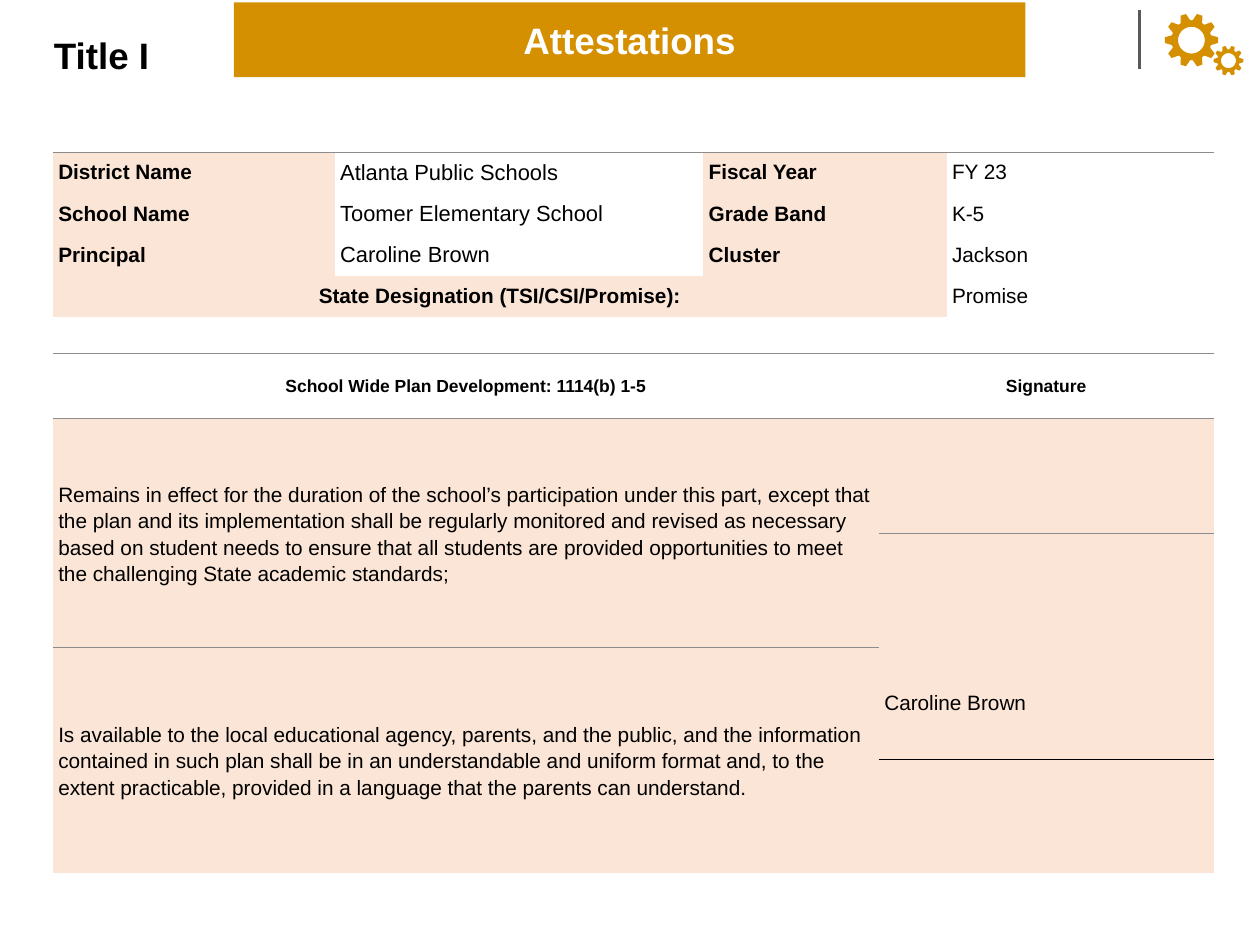
from math import cos, radians, sin

from lxml import etree
from pptx import Presentation
from pptx.dml.color import RGBColor
from pptx.enum.shapes import MSO_CONNECTOR
from pptx.enum.text import MSO_ANCHOR, MSO_AUTO_SIZE, PP_ALIGN
from pptx.oxml.ns import qn
from pptx.util import Inches, Pt

LEFT, CENTER = PP_ALIGN.LEFT, PP_ALIGN.CENTER
MIDDLE = MSO_ANCHOR.MIDDLE
NO_AUTOFIT = MSO_AUTO_SIZE.NONE
STRAIGHT = MSO_CONNECTOR.STRAIGHT

GOLD = RGBColor(0xD5, 0x90, 0x02)
PEACH = RGBColor(0xFB, 0xE5, 0xD6)
GRAY = RGBColor(0x8C, 0x8C, 0x8C)
DARK_GRAY = RGBColor(0x59, 0x59, 0x59)
BLACK = RGBColor(0, 0, 0)
WHITE = RGBColor(0xFF, 0xFF, 0xFF)

PLAIN_TABLE_STYLE = "{2D5ABB26-0587-4C30-8999-92F81FD0307C}"
MARGIN = Inches(0.67)
PADDING = Inches(0.07)


def write(frame, text, size, bold, color=BLACK, align=LEFT, spacing=1.0):
    frame.text = text
    paragraph = frame.paragraphs[0]
    paragraph.alignment = align
    paragraph.line_spacing = spacing
    for run in paragraph.runs:
        run.font.name = "Arial"
        run.font.size = Pt(size)
        run.font.bold = bold
        run.font.color.rgb = color


def rule(cell, side, color):
    properties = cell._tc.get_or_add_tcPr()
    line = etree.Element(qn(f"a:{side}"), w=str(Pt(1)))
    fill = etree.SubElement(line, qn("a:solidFill"))
    etree.SubElement(fill, qn("a:srgbClr"), val=str(color))
    borders = [child for child in properties if child.tag in (qn("a:lnT"), qn("a:lnB"))]
    properties.insert(len(borders), line)


prs = Presentation()
prs.slide_width, prs.slide_height = Inches(16), Inches(12)
slide = prs.slides.add_slide(prs.slide_layouts[5])

banner = slide.shapes.title
banner.left, banner.top = Inches(2.97), Inches(0.03)
banner.width, banner.height = Inches(10.05), Inches(0.95)
banner.fill.solid()
banner.fill.fore_color.rgb = GOLD
write(banner.text_frame, "Attestations", 33.6, True, WHITE, CENTER)

program = slide.shapes.add_textbox(0, Inches(0.14), Inches(2.58), Inches(1.12))
write(program.text_frame, "Title I", 33.6, True, align=CENTER)

for heading in (banner, program):
    heading.text_frame.word_wrap = True
    heading.text_frame.auto_size = NO_AUTOFIT
    heading.text_frame.vertical_anchor = MIDDLE

divider = slide.shapes.add_connector(
    STRAIGHT, Inches(14.47), Inches(0.13), Inches(14.47), Inches(0.88))
divider.line.color.rgb = DARK_GRAY
divider.line.width = Pt(2)
etree.SubElement(divider._element.spPr, qn("a:effectLst"))

TEETH = 10
TOOTH_PROFILE = [(-18, 0.74), (-13.5, 0.76), (-10, 0.86), (-6, 1),
                 (6, 1), (10, 0.86), (13.5, 0.76)]
gears = slide.shapes.add_group_shape()
for center_x, center_y, radius in ((15.13, 0.51, 0.34), (15.6, 0.77, 0.19)):
    rim = [(360 / TEETH * (tooth + 0.5) + turn, reach)
           for tooth in range(TEETH) for turn, reach in TOOTH_PROFILE]
    hole = [(turn, 0.5) for turn in range(0, 360, 10)]
    rim_points, hole_points = [
        [(Inches(center_x + radius * reach * sin(radians(turn))),
          Inches(center_y - radius * reach * cos(radians(turn))))
         for turn, reach in contour]
        for contour in (rim, hole)]
    outline = gears.shapes.build_freeform(*rim_points[0])
    outline.add_line_segments(rim_points[1:], close=True)
    outline.move_to(*hole_points[0])
    outline.add_line_segments(hole_points[1:], close=True)
    gear = outline.convert_to_shape()
    gear.fill.solid()
    gear.fill.fore_color.rgb = GOLD
    gear.line.fill.background()
    gear.shadow.inherit = False

plan_columns, plan_rows = [10.49, 4.25], [0.83, 1.45, 1.45, 1.43, 1.43]
school_columns, school_rows = [3.58, 4.68, 3.09, 3.4], [0.525] * 4
tables = []
for top, columns, rows in ((4.49, plan_columns, plan_rows),
                           (1.93, school_columns, school_rows)):
    table = slide.shapes.add_table(
        len(rows), len(columns), MARGIN, Inches(top),
        Inches(sum(columns)), Inches(sum(rows))).table
    table._tbl.tblPr.find(qn("a:tableStyleId")).text = PLAIN_TABLE_STYLE
    table.horz_banding = False
    for column, width in zip(table.columns, columns):
        column.width = Inches(width)
    for row, height in zip(table.rows, rows):
        row.height = Inches(height)
    for cell in table.iter_cells():
        cell.vertical_anchor = MIDDLE
        cell.margin_left = cell.margin_right = PADDING
        cell.margin_top = cell.margin_bottom = PADDING
    tables.append(table)
plan, school = tables

plan_headers = ["School Wide Plan Development: 1114(b) 1-5", "Signature"]
requirements = [
    "Remains in effect for the duration of the school’s participation under this part, "
    "except that the plan and its implementation shall be regularly monitored and revised "
    "as necessary based on student needs to ensure that all students are provided "
    "opportunities to meet the challenging State academic standards;",
    "Is available to the local educational agency, parents, and the public, and the "
    "information contained in such plan shall be in an understandable and uniform format "
    "and, to the extent practicable, provided in a language that the parents can understand.",
]
for column, header in enumerate(plan_headers):
    header_cell = plan.cell(0, column)
    header_cell.margin_left = header_cell.margin_right = Inches(0.14)
    write(header_cell.text_frame, header, 16, True, align=CENTER)
    header_cell.fill.background()
    for row in range(1, len(plan_rows)):
        body_cell = plan.cell(row, column)
        body_cell.fill.solid()
        body_cell.fill.fore_color.rgb = PEACH
    rule(header_cell, "lnT", GRAY)
    rule(header_cell, "lnB", GRAY)
    rule(plan.cell(1, column), "lnT", GRAY)
for index, requirement in enumerate(requirements):
    first_row = 1 + 2 * index
    plan.cell(first_row, 0).merge(plan.cell(first_row + 1, 0))
    write(plan.cell(first_row, 0).text_frame, requirement, 19, False, spacing=1.15)
write(plan.cell(3, 1).text_frame, "Caroline Brown", 19, False)
rule(plan.cell(3, 1), "lnB", BLACK)
rule(plan.cell(4, 1), "lnT", BLACK)

school_facts = [
    ["District Name", "Atlanta Public Schools", "Fiscal Year", "FY 23"],
    ["School Name", "Toomer Elementary School", "Grade Band", "K-5"],
    ["Principal", "Caroline Brown", "Cluster", "Jackson"],
    ["State Designation (TSI/CSI/Promise):", "", "", "Promise"],
]
last_row = len(school_facts) - 1
school.cell(last_row, 0).merge(school.cell(last_row, 2))
for row, facts in enumerate(school_facts):
    for column, fact in enumerate(facts):
        cell = school.cell(row, column)
        is_label = column % 2 == 0
        if fact:
            write(cell.text_frame, fact, 20 if column == 1 else 19, is_label,
                  align=CENTER if cell.is_merge_origin else LEFT)
        if is_label or cell.is_spanned:
            cell.fill.solid()
            cell.fill.fore_color.rgb = PEACH
        else:
            cell.fill.background()
        if row == 0:
            rule(cell, "lnT", GRAY)

prs.save("out.pptx")
